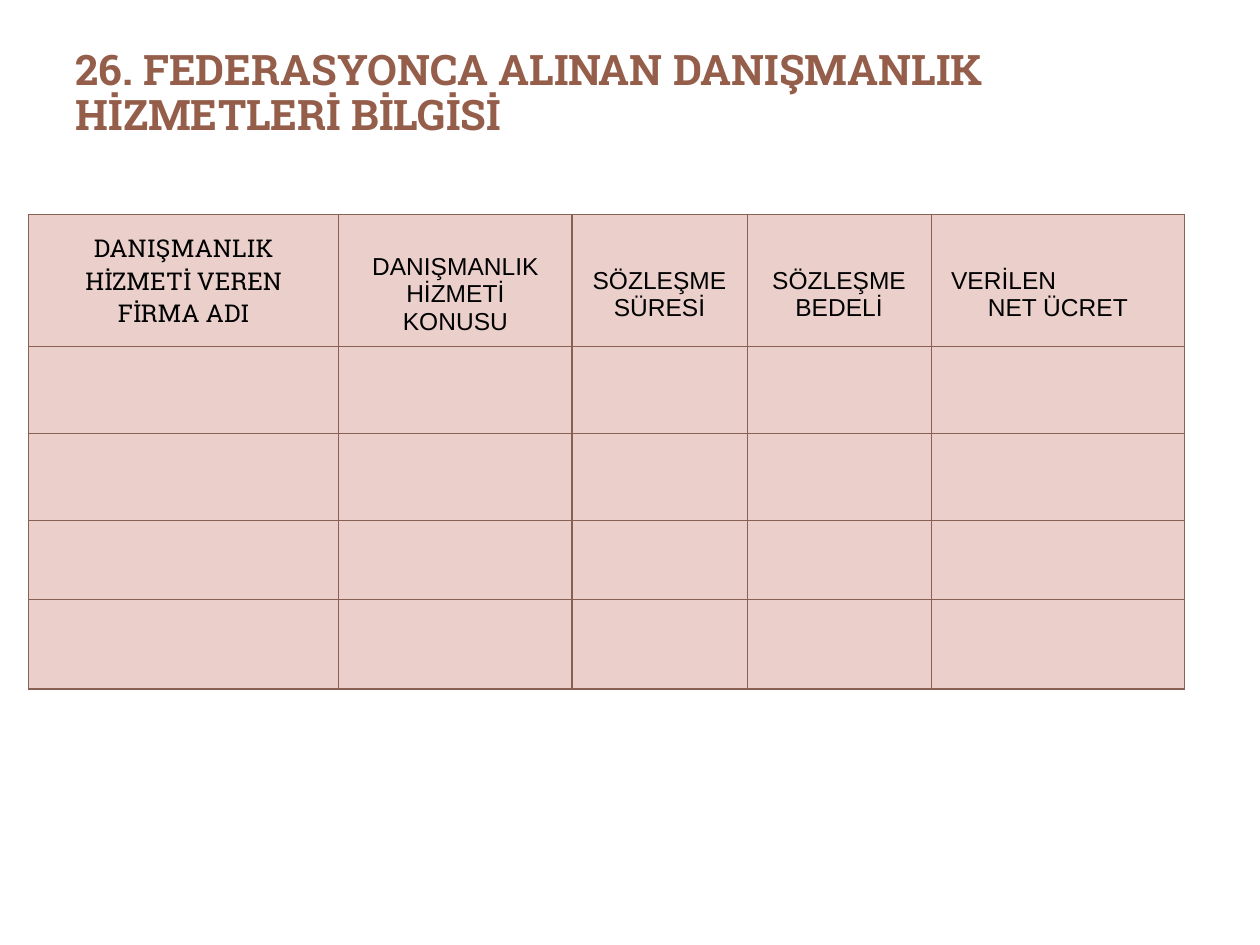
from dataclasses import dataclass

from lxml.etree import SubElement
from pptx import Presentation
from pptx.dml.color import RGBColor
from pptx.enum.text import MSO_ANCHOR, MSO_AUTO_SIZE, PP_ALIGN
from pptx.oxml.ns import qn
from pptx.table import Table, _Cell
from pptx.text.text import TextFrame
from pptx.util import Cm, Pt

SLAB = "Roboto Slab"
TITLE_COLOR = "955E4B"
BORDER_COLOR = "896154"
CELL_COLOR = "EACFCB"
ROW_HEIGHTS = (2.67, 1.75, 1.75, 1.6, 1.8)


@dataclass(frozen=True)
class Column:
    width: float
    lines: tuple[str, ...]
    font: str = "Arial"
    top_margin: float = 0.69
    first_align: PP_ALIGN = PP_ALIGN.CENTER


COLUMNS = (
    Column(6.25, ("DANIŞMANLIK HİZMETİ VEREN FİRMA ADI",), SLAB, 0.13),
    Column(4.7, ("DANIŞMANLIK HİZMETİ KONUSU",)),
    Column(3.53, ("SÖZLEŞME SÜRESİ",)),
    Column(3.71, ("SÖZLEŞME BEDELİ",)),
    Column(5.11, ("VERİLEN", "NET ÜCRET"), first_align=PP_ALIGN.LEFT),
)


def rgb(value: str) -> RGBColor:
    return RGBColor.from_string(value)


def write(frame: TextFrame, *lines: str, font: str, size: float,
          color: str = "000000", bold: bool = False,
          align: PP_ALIGN = PP_ALIGN.CENTER, spacing: float = 1.0) -> None:
    for index, line in enumerate(lines):
        paragraph = frame.add_paragraph() if index else frame.paragraphs[0]
        paragraph.alignment = align
        paragraph.line_spacing = spacing
        run = paragraph.add_run()
        run.text = line
        run.font.name = font
        run.font.size = Pt(size)
        run.font.bold = bold
        run.font.color.rgb = rgb(color)


def style_cell(cell: _Cell) -> None:
    properties = cell._tc.get_or_add_tcPr()
    for side in ("lnL", "lnR", "lnT", "lnB"):
        border = SubElement(properties, qn(f"a:{side}"), w=str(Pt(0.75)))
        fill = SubElement(border, qn("a:solidFill"))
        SubElement(fill, qn("a:srgbClr"), val=BORDER_COLOR)
    cell.fill.solid()
    cell.fill.fore_color.rgb = rgb(CELL_COLOR)
    cell.vertical_anchor = MSO_ANCHOR.MIDDLE


def fill_header(table: Table) -> None:
    for index, column in enumerate(COLUMNS):
        table.columns[index].width = Cm(column.width)
        header = table.cell(0, index)
        header.margin_top = Cm(column.top_margin)
        write(header.text_frame, *column.lines, font=column.font, size=14)
        first = header.text_frame.paragraphs[0]
        first.alignment = column.first_align
        if column.first_align == PP_ALIGN.LEFT:
            first._p.get_or_add_pPr().set("marL", str(Cm(0.15)))


def main() -> None:
    presentation = Presentation()
    presentation.slide_width = Cm(25.4)
    presentation.slide_height = Cm(19.05)
    slide = presentation.slides.add_slide(presentation.slide_layouts[5])

    title = slide.shapes.title
    title.left, title.top = Cm(1.27), Cm(0.76)
    title.width, title.height = Cm(22.86), Cm(3.18)
    heading = title.text_frame
    heading.word_wrap = True
    heading.auto_size = MSO_AUTO_SIZE.NONE
    heading.vertical_anchor = MSO_ANCHOR.TOP
    heading.margin_top = Cm(0.23)
    write(heading, "26. FEDERASYONCA ALINAN DANIŞMANLIK HİZMETLERİ BİLGİSİ",
          font=SLAB, size=24, color=TITLE_COLOR, bold=True,
          align=PP_ALIGN.LEFT, spacing=0.9)

    table = slide.shapes.add_table(
        len(ROW_HEIGHTS), len(COLUMNS), Cm(0.58), Cm(4.32),
        Cm(sum(column.width for column in COLUMNS)), Cm(sum(ROW_HEIGHTS))).table
    for row, height in zip(table.rows, ROW_HEIGHTS):
        row.height = Cm(height)
    for cell in table.iter_cells():
        style_cell(cell)
    fill_header(table)
    presentation.save("out.pptx")


if __name__ == "__main__":
    main()
